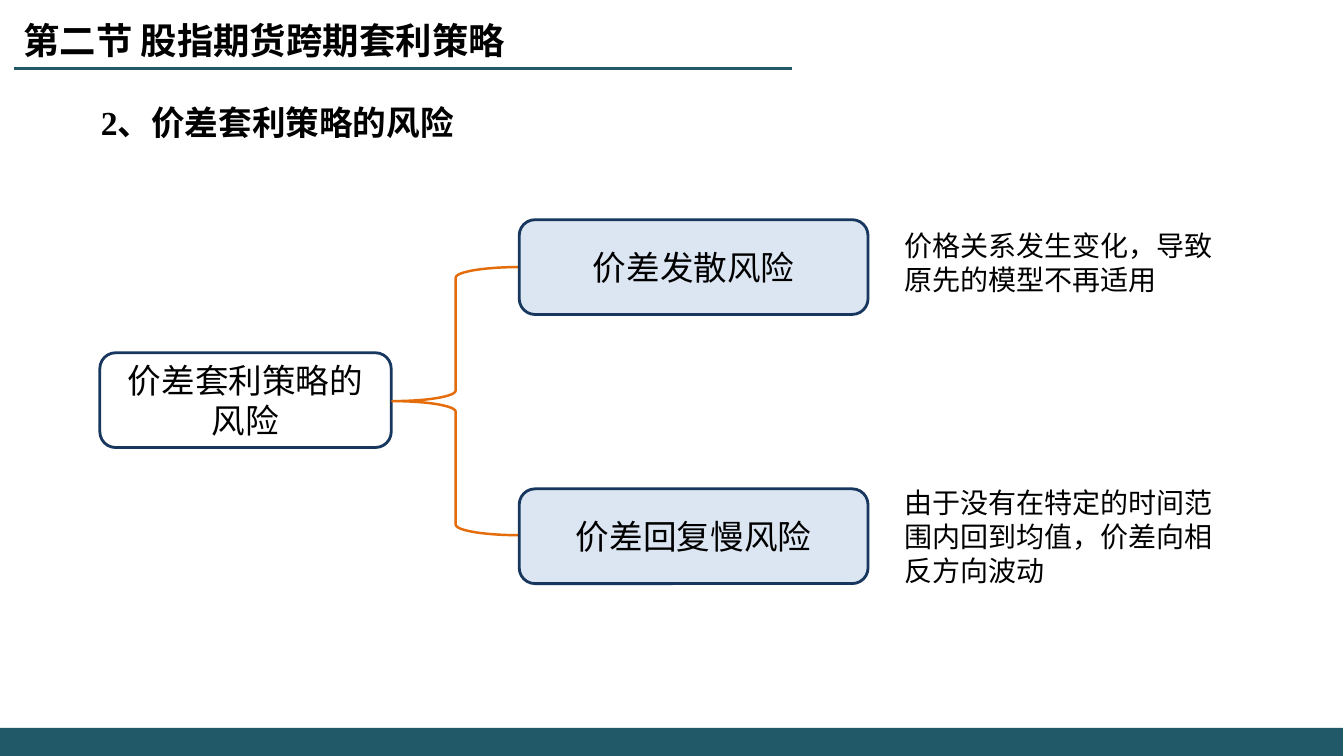
import pptx
import pptx.util
import pptx.dml.color
import pptx.enum.shapes
import pptx.enum.text
import pptx.oxml.ns
from lxml import etree

SHAPES = pptx.enum.shapes.MSO_SHAPE
ALIGN = pptx.enum.text.PP_ALIGN
ANCHOR = pptx.enum.text.MSO_ANCHOR
AUTO_SIZE = pptx.enum.text.MSO_AUTO_SIZE

TEAL, NAVY, PALE_BLUE, ORANGE, BLACK = "215968", "17375E", "DCE6F2", "E46C0A", "000000"
CJK_FONT = "Noto Sans CJK SC"
LATIN_FONT = "Times New Roman"


def px(length):
    """Turn whole px, 100 to the inch, into EMU."""
    return pptx.util.Emu(length * 9144)


def colour(hex_string):
    return pptx.dml.color.RGBColor.from_string(hex_string)


def write(frame, text, size=20, font=LATIN_FONT, bold=False, align=ALIGN.LEFT,
          anchor=ANCHOR.TOP, spacing=None, indent=10, fit=AUTO_SIZE.NONE):
    frame.word_wrap = True
    frame.auto_size = fit
    frame.vertical_anchor = anchor
    frame.margin_left = px(indent)
    paragraph = frame.paragraphs[0]
    paragraph.alignment = align
    paragraph.line_spacing = spacing
    run = paragraph.add_run()
    run.text = text
    run.font.size = pptx.util.Pt(size)
    run.font.bold = bold
    run.font.name = font
    run.font.color.rgb = colour(BLACK)
    east_asian = etree.SubElement(run._r.get_or_add_rPr(), pptx.oxml.ns.qn("a:ea"))
    east_asian.set("typeface", CJK_FONT)


class RiskSlide:
    def __init__(self, deck):
        self.slide = deck.slides.add_slide(deck.slide_layouts[5])

    def title(self, text, left, top, width, height):
        heading = self.slide.shapes.title
        heading.left, heading.top = px(left), px(top)
        heading.width, heading.height = px(width), px(height)
        write(heading.text_frame, text, size=26, font=CJK_FONT, bold=True)

    def shape(self, preset, left, top, width, height, fill=None, line=None, weight=2):
        shape = self.slide.shapes.add_shape(preset, px(left), px(top), px(width), px(height))
        shape.shadow.inherit = False
        if fill:
            shape.fill.solid()
            shape.fill.fore_color.rgb = colour(fill)
        else:
            shape.fill.background()
        if line:
            shape.line.color.rgb = colour(line)
            shape.line.width = pptx.util.Pt(weight)
        else:
            shape.line.fill.background()
        return shape

    def node(self, text, left, top, width, height, fill=None, font=LATIN_FONT):
        box = self.shape(SHAPES.ROUNDED_RECTANGLE, left, top, width, height, fill, NAVY)
        write(box.text_frame, text, size=24, font=font, align=ALIGN.CENTER, anchor=ANCHOR.MIDDLE)

    def text(self, text, left, top, width, height, **style):
        box = self.slide.shapes.add_textbox(px(left), px(top), px(width), px(height))
        write(box.text_frame, text, fit=AUTO_SIZE.SHAPE_TO_FIT_TEXT, **style)

    def rule(self, left, right, y):
        rule = self.slide.shapes.add_connector(
            pptx.enum.shapes.MSO_CONNECTOR.STRAIGHT, px(left), px(y), px(right), px(y))
        rule.line.color.rgb = colour(TEAL)
        rule.line.width = pptx.util.Pt(1.5)
        etree.SubElement(rule._element.spPr, pptx.oxml.ns.qn("a:effectLst"))


def main():
    deck = pptx.Presentation()
    deck.slide_width, deck.slide_height = px(1333), px(750)
    page = RiskSlide(deck)

    page.shape(SHAPES.RECTANGLE, 0, 722, 1332, 28, fill=TEAL)
    page.rule(14, 786, 68)
    page.title("第二节 股指期货跨期套利策略", 13, 13, 611, 54)
    page.text("2、价差套利策略的风险", 29, 76, 1228, 71,
              size=24, bold=True, spacing=1.5, indent=71)

    page.node("价差套利策略的风险", 99, 350, 289, 94, font="Calibri")
    page.shape(SHAPES.LEFT_BRACE, 389, 265, 126, 266, line=ORANGE, weight=1.75)

    risks = [
        ("价差发散风险", 218, "价格关系发生变化，导致原先的模型不再适用", 222, 331, 77),
        ("价差回复慢风险", 485, "由于没有在特定的时间范围内回到均值，价差向相反方向波动", 477, 346, 111),
    ]
    for risk, risk_top, reason, reason_top, reason_width, reason_height in risks:
        page.node(risk, 515, risk_top, 346, 94, fill=PALE_BLUE)
        page.text(reason, 887, reason_top, reason_width, reason_height)

    deck.save("out.pptx")


if __name__ == "__main__":
    main()
